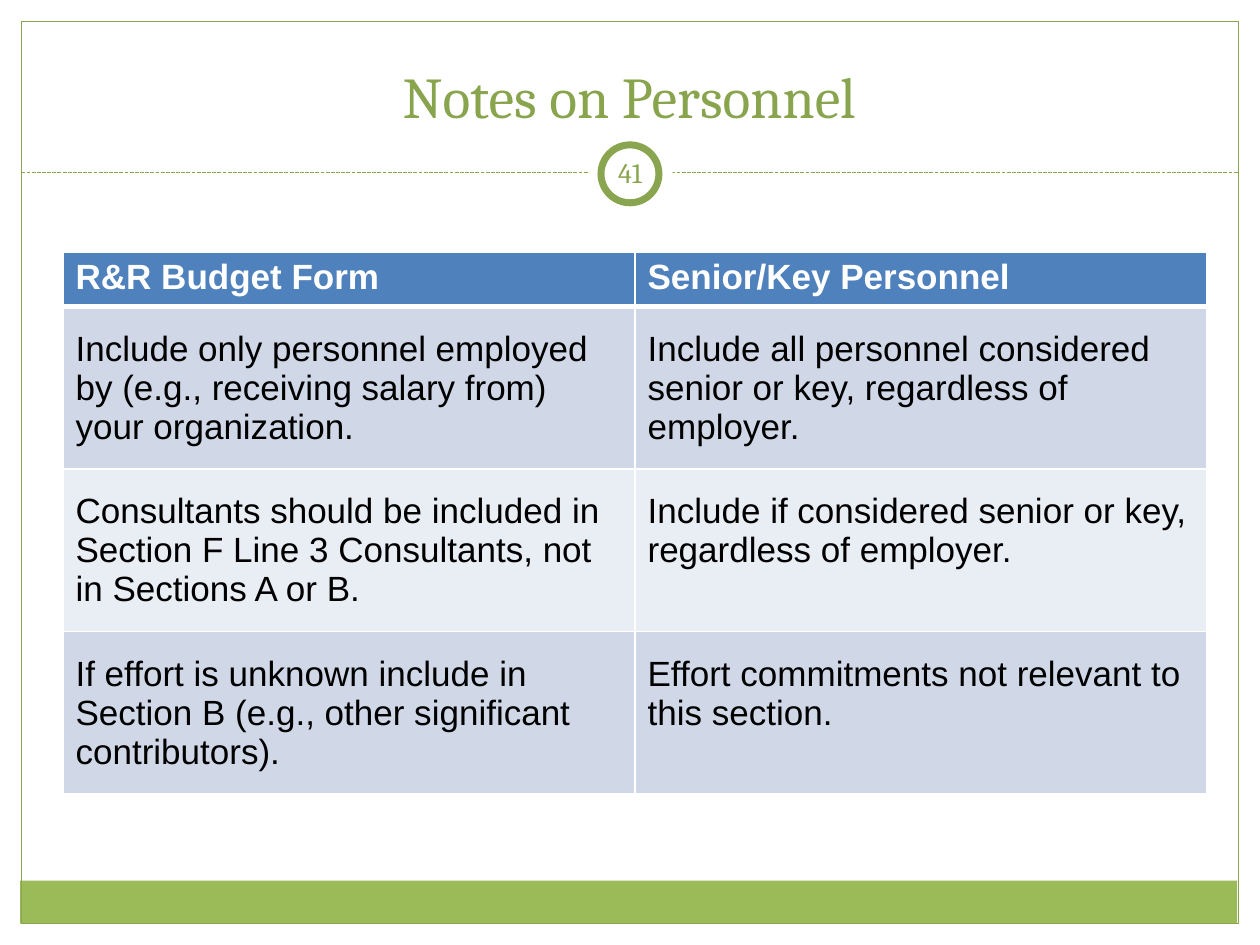
from dataclasses import dataclass

from lxml import etree
from pptx import Presentation
from pptx.dml.color import RGBColor
from pptx.enum.dml import MSO_LINE
from pptx.enum.shapes import MSO_CONNECTOR, MSO_SHAPE
from pptx.enum.text import MSO_ANCHOR, PP_ALIGN
from pptx.oxml.ns import qn
from pptx.util import Inches, Pt

RECT = MSO_SHAPE.RECTANGLE
OVAL = MSO_SHAPE.OVAL
STRAIGHT = MSO_CONNECTOR.STRAIGHT
DASH = MSO_LINE.SQUARE_DOT
LEFT = PP_ALIGN.LEFT
CENTER = PP_ALIGN.CENTER
TOP = MSO_ANCHOR.TOP
MIDDLE = MSO_ANCHOR.MIDDLE
BOTTOM = MSO_ANCHOR.BOTTOM


@dataclass(frozen=True)
class Theme:
    white: str = "FFFFFF"
    black: str = "000000"
    green: str = "89A54F"
    heading: str = "88A44D"
    footer: str = "9BBB59"
    header: str = "4F81BD"
    bands: tuple = ("D0D8E8", "E9EDF4")
    serif: str = "Cambria"
    sans: str = "Arial"
    title_size: int = 33
    page_size: int = 16
    table_size: int = 20


def color(code):
    return RGBColor.from_string(code)


def assign(target, values):
    for name, value in values.items():
        setattr(target, name, value)


class Painter:
    def __init__(self, slide, theme):
        self.slide = slide
        self.theme = theme

    def text(self, frame, words, font, size, tint, bold=False, align=LEFT):
        frame.word_wrap = True
        para = frame.paragraphs[0]
        para.alignment = align
        run = para.add_run()
        run.text = words
        assign(run.font, {"name": font, "size": Pt(size), "bold": bold})
        run.font.color.rgb = color(tint)

    def title(self, words, box):
        holder = self.slide.shapes.title
        assign(holder, dict(zip(("left", "top", "width", "height"), map(Inches, box))))
        holder.text_frame.vertical_anchor = BOTTOM
        self.text(holder.text_frame, words, self.theme.serif,
                  self.theme.title_size, self.theme.heading, align=CENTER)

    def shape(self, kind, box, fill=None, line=None, width=0.75):
        item = self.slide.shapes.add_shape(kind, *map(Inches, box))
        item.shadow.inherit = False
        if fill:
            item.fill.solid()
            item.fill.fore_color.rgb = color(fill)
        else:
            item.fill.background()
        if line:
            item.line.color.rgb = color(line)
            item.line.width = Pt(width)
        else:
            item.line.fill.background()

    def rule(self, start, end):
        item = self.slide.shapes.add_connector(STRAIGHT, *map(Inches, start + end))
        item.line.color.rgb = color(self.theme.green)
        assign(item.line, {"width": Pt(0.75), "dash_style": DASH})
        etree.SubElement(item._element.spPr, qn("a:effectLst"))

    def label(self, words, box):
        frame = self.slide.shapes.add_textbox(*map(Inches, box)).text_frame
        inset = Inches(0.05)
        assign(frame, {"margin_left": inset, "margin_right": inset,
                       "margin_top": inset, "margin_bottom": inset,
                       "vertical_anchor": MIDDLE})
        self.text(frame, words, self.theme.serif, self.theme.page_size,
                  self.theme.green, align=CENTER)

    def border(self, cell, widths):
        props = cell._tc.get_or_add_tcPr()
        for side, width in zip("LRTB", widths):
            line = etree.SubElement(props, qn(f"a:ln{side}"), w=str(Pt(width)))
            fill = etree.SubElement(line, qn("a:solidFill"))
            etree.SubElement(fill, qn("a:srgbClr"), val=self.theme.white)

    def table(self, rows, box, heights):
        theme = self.theme
        grid = self.slide.shapes.add_table(len(rows), len(rows[0]), *map(Inches, box)).table
        for r, (row, height) in enumerate(zip(rows, heights)):
            grid.rows[r].height = Inches(height)
            head = r == 0
            fill = theme.header if head else theme.bands[(r - 1) % 2]
            tint = theme.white if head else theme.black
            for c, words in enumerate(row):
                cell = grid.cell(r, c)
                self.border(cell, (1, 1, 3 if r == 1 else 1, 3 if head else 1))
                cell.fill.solid()
                cell.fill.fore_color.rgb = color(fill)
                assign(cell, {"margin_top": Inches(0.05 if head else 0.18),
                              "vertical_anchor": TOP})
                self.text(cell.text_frame, words, theme.sans, theme.table_size, tint, head)


def main():
    deck = Presentation()
    assign(deck, {"slide_width": Inches(10), "slide_height": Inches(7.5)})
    theme = Theme()
    page = Painter(deck.slides.add_slide(deck.slide_layouts[5]), theme)

    page.title("Notes on Personnel", (0.33, 0.25, 9.33, 0.83))
    page.shape(RECT, (0.16, 6.99, 9.66, 0.34), fill=theme.footer)
    page.shape(RECT, (0.17, 0.17, 9.66, 7.16), line=theme.green)
    page.rule((0.17, 1.37), (9.83, 1.37))
    page.shape(OVAL, (4.67, 1.05, 0.67, 0.67), fill=theme.white)
    page.shape(OVAL, (4.77, 1.15, 0.46, 0.46), fill=theme.white, line=theme.green, width=4)
    page.label("41", (4.75, 1.13, 0.5, 0.48))

    rows = [
        ("R&R Budget Form", "Senior/Key Personnel"),
        ("Include only personnel employed by (e.g., receiving salary from) your organization.",
         "Include all personnel considered senior or key, regardless of employer."),
        ("Consultants should be included in Section F Line 3 Consultants, not in Sections A or B.",
         "Include if considered senior or key, regardless of employer."),
        ("If effort is unknown include in Section B (e.g., other significant contributors).",
         "Effort commitments not relevant to this section."),
    ]
    heights = [0.41] + [1.29] * 3
    page.table(rows, (0.5, 2, 9.08, sum(heights)), heights)
    deck.save("out.pptx")


if __name__ == "__main__":
    main()
